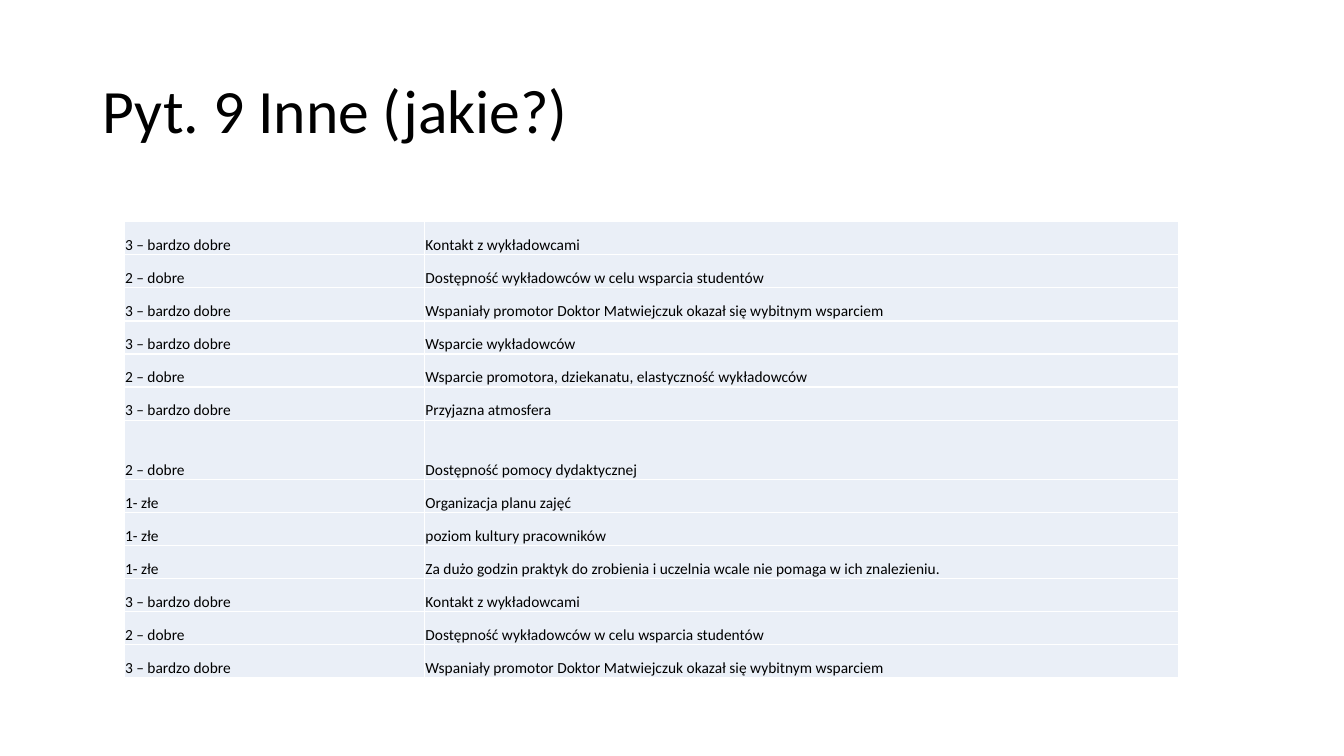
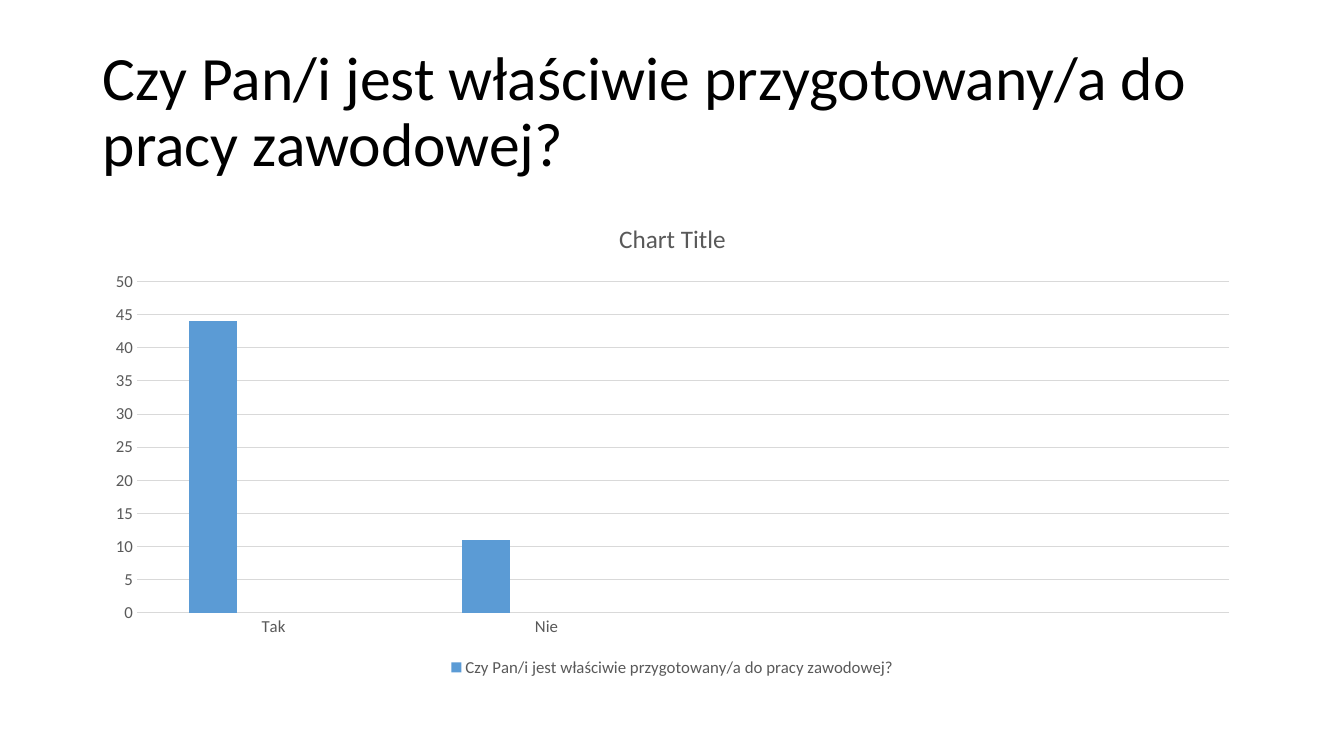
"""Build two survey result slides: a table of comments and a column chart."""
from dataclasses import dataclass

from lxml.etree import SubElement
from pptx import Presentation
from pptx.chart.data import CategoryChartData
from pptx.dml.color import RGBColor
from pptx.enum.chart import XL_CHART_TYPE as ChartType
from pptx.enum.chart import XL_LEGEND_POSITION as LegendPosition
from pptx.enum.chart import XL_TICK_MARK as TickMark
from pptx.enum.text import MSO_ANCHOR, MSO_AUTO_SIZE, PP_ALIGN
from pptx.oxml import parse_xml
from pptx.oxml.ns import nsdecls, qn
from pptx.util import Inches, Pt


@dataclass(frozen=True)
class Theme:
    font: str = "Calibri"
    text: str = "000000"
    muted: str = "595959"
    grid: str = "D9D9D9"
    cell: str = "EAEFF7"
    border: str = "FFFFFF"
    series: tuple = ("5B9BD5", "ED7D31", "A5A5A5")
    title_size: int = 44
    chart_title_size: int = 18
    label_size: int = 12
    cell_size: int = 11


THEME = Theme()
TITLE_BOX = (0.92, 0.4, 11.5, 1.45)
TABLE_LEFT, TABLE_TOP, TABLE_HEIGHT = 1.23, 2.2, 4.53
COLUMN_WIDTHS = (2.98, 7.48)
TALL_ROW, TALL_ROW_HEIGHT = 6, 0.59
CHART_BOX = (0.92, 2, 11.5, 4.76)

COMMENTS_TITLE = "Pyt. 9 Inne (jakie?)"
VERY_GOOD, GOOD, BAD = "3 – bardzo dobre", "2 – dobre", "1- złe"
OPENING_COMMENTS = [
    (VERY_GOOD, "Kontakt z wykładowcami"),
    (GOOD, "Dostępność wykładowców w celu wsparcia studentów"),
    (VERY_GOOD, "Wspaniały promotor Doktor Matwiejczuk okazał się wybitnym wsparciem"),
]
COMMENTS = [
    *OPENING_COMMENTS,
    (VERY_GOOD, "Wsparcie wykładowców"),
    (GOOD, "Wsparcie promotora, dziekanatu, elastyczność wykładowców"),
    (VERY_GOOD, "Przyjazna atmosfera"),
    (GOOD, "Dostępność pomocy dydaktycznej"),
    (BAD, "Organizacja planu zajęć"),
    (BAD, "poziom kultury pracowników"),
    (BAD, "Za dużo godzin praktyk do zrobienia i uczelnia wcale nie pomaga w ich znalezieniu."),
    *OPENING_COMMENTS,
]

QUESTION = "Czy Pan/i jest właściwie przygotowany/a do pracy zawodowej?"
CHART_TITLE = "Chart Title"
ANSWERS = ("Tak", "Nie", "", "")
SERIES = {
    QUESTION: (44, 11, None, None),
    "Series 2": (None,) * 4,
    "Series 3": (None,) * 4,
}
HIDDEN_LEGEND_ENTRIES = (1, 2)


def style_font(font, size, color):
    font.name = THEME.font
    font.size = Pt(size)
    font.bold = False
    font.color.rgb = RGBColor.from_string(color)


def style_line(line, color):
    line.color.rgb = RGBColor.from_string(color)
    line.width = Pt(0.75)


def fill_solid(fill, color):
    fill.solid()
    fill.fore_color.rgb = RGBColor.from_string(color)


def add_titled_slide(presentation, text):
    slide = presentation.slides.add_slide(presentation.slide_layouts[5])
    title = slide.shapes.title
    title.left, title.top, title.width, title.height = map(Inches, TITLE_BOX)
    frame = title.text_frame
    frame.text = text
    frame.word_wrap = True
    frame.auto_size = MSO_AUTO_SIZE.NONE
    frame.vertical_anchor = MSO_ANCHOR.MIDDLE
    paragraph = frame.paragraphs[0]
    paragraph.alignment = PP_ALIGN.LEFT
    paragraph.line_spacing = 0.9
    style_font(paragraph.runs[0].font, THEME.title_size, THEME.text)
    return slide


def format_cell(cell, text):
    cell.text = text
    cell.vertical_anchor = MSO_ANCHOR.BOTTOM
    cell.margin_left = cell.margin_right = cell.margin_top = Inches(0.01)
    cell.margin_bottom = 0
    style_font(cell.text_frame.paragraphs[0].runs[0].font, THEME.cell_size, THEME.text)
    fill_solid(cell.fill, THEME.cell)
    properties = cell._tc.get_or_add_tcPr()
    for index, side in enumerate("LRTB"):
        properties.insert(index, parse_xml(
            f'<a:ln{side} {nsdecls("a")} w="{Pt(1)}"><a:solidFill>'
            f'<a:srgbClr val="{THEME.border}"/></a:solidFill></a:ln{side}>'))


def add_comment_table(slide):
    table = slide.shapes.add_table(
        len(COMMENTS), len(COLUMN_WIDTHS), Inches(TABLE_LEFT), Inches(TABLE_TOP),
        Inches(sum(COLUMN_WIDTHS)), Inches(TABLE_HEIGHT)).table
    table.first_row = table.horz_banding = False
    for column, width in zip(table.columns, COLUMN_WIDTHS):
        column.width = Inches(width)
    row_height = (TABLE_HEIGHT - TALL_ROW_HEIGHT) / (len(COMMENTS) - 1)
    for index, (row, texts) in enumerate(zip(table.rows, COMMENTS)):
        row.height = Inches(TALL_ROW_HEIGHT if index == TALL_ROW else row_height)
        for cell, text in zip(row.cells, texts):
            format_cell(cell, text)


def format_axes(chart):
    for axis in (chart.category_axis, chart.value_axis):
        axis.major_tick_mark = axis.minor_tick_mark = TickMark.NONE
        style_font(axis.tick_labels.font, THEME.label_size, THEME.muted)
    style_line(chart.category_axis.format.line, THEME.grid)
    values = chart.value_axis
    values.minimum_scale, values.maximum_scale, values.major_unit = 0, 50, 5
    values.format.line.fill.background()
    style_line(values.major_gridlines.format.line, THEME.grid)


def format_legend(chart):
    chart.has_legend = True
    legend = chart.legend
    legend.position = LegendPosition.BOTTOM
    legend.include_in_layout = False
    style_font(legend.font, THEME.label_size, THEME.muted)
    position = legend._element.find(qn("c:legendPos"))
    for index in reversed(HIDDEN_LEGEND_ENTRIES):
        entry = parse_xml(f'<c:legendEntry {nsdecls("c")}/>')
        SubElement(entry, qn("c:idx")).set("val", str(index))
        SubElement(entry, qn("c:delete")).set("val", "1")
        position.addnext(entry)


def add_answer_chart(slide):
    data = CategoryChartData()
    data.categories = ANSWERS
    for name, values in SERIES.items():
        data.add_series(name, values)
    chart = slide.shapes.add_chart(
        ChartType.COLUMN_CLUSTERED, *map(Inches, CHART_BOX), data).chart
    chart.has_title = True
    title_frame = chart.chart_title.text_frame
    title_frame.text = CHART_TITLE
    style_font(title_frame.paragraphs[0].runs[0].font, THEME.chart_title_size, THEME.muted)
    plot = chart.plots[0]
    plot.gap_width, plot.overlap = 219, -27
    plot.vary_by_categories = False
    for series, color in zip(plot.series, THEME.series):
        fill_solid(series.format.fill, color)
    format_axes(chart)
    format_legend(chart)


def main():
    presentation = Presentation()
    presentation.slide_width, presentation.slide_height = Inches(13.33), Inches(7.5)
    add_comment_table(add_titled_slide(presentation, COMMENTS_TITLE))
    add_answer_chart(add_titled_slide(presentation, QUESTION))
    presentation.save("out.pptx")


if __name__ == "__main__":
    main()
